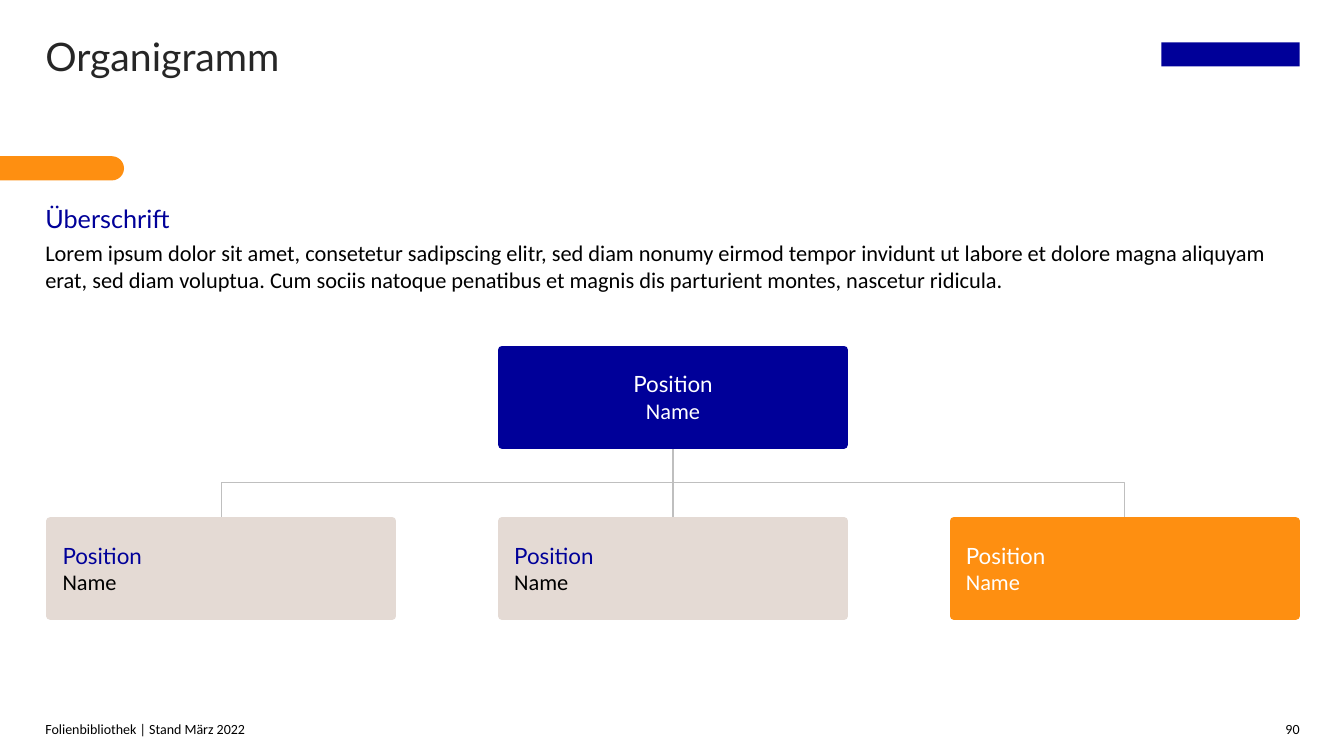
"""Builds an organisation chart slide with one lead box and three reports."""
from dataclasses import dataclass

import lxml.etree
import pptx
import pptx.dml.color
import pptx.enum.shapes
import pptx.enum.text
import pptx.oxml.ns
import pptx.util

Inches = pptx.util.Inches
Pt = pptx.util.Pt
RGB = pptx.dml.color.RGBColor.from_string
Align = pptx.enum.text.PP_ALIGN
Anchor = pptx.enum.text.MSO_ANCHOR
Shape = pptx.enum.shapes.MSO_SHAPE
Link = pptx.enum.shapes.MSO_CONNECTOR
qn = pptx.oxml.ns.qn


@dataclass(frozen=True)
class Theme:
    blue: str = "000099"
    orange: str = "FE8F11"
    sand: str = "E4DAD4"
    grey: str = "BFBFBF"
    dark: str = "262626"
    black: str = "000000"
    white: str = "FFFFFF"
    head_font: str = "Lato"
    body_font: str = "Calibri"
    title: float = 28
    heading: float = 18
    body: float = 16
    footer: float = 10
    border: float = 6
    link: float = 0.75


T = Theme()


@dataclass(frozen=True)
class Line:
    text: str
    size: float
    font: str
    color: str
    after: float = 0


@dataclass(frozen=True)
class Block:
    x: float
    y: float
    w: float
    h: float
    lines: tuple[Line, ...]
    align: Align = Align.LEFT
    anchor: Anchor = Anchor.TOP
    wrap: bool = True


@dataclass(frozen=True)
class Post:
    x: float
    y: float
    fill: str
    position_color: str
    name_color: str
    align: Align = Align.LEFT


BOX_W, BOX_H = 3.39, 0.94
COLUMNS = [0.5 + 4.48 * i for i in range(3)]
LEAD_Y, REPORT_Y = 3.47, 5.17
LEFT, CONTENT_W = 0.45, 12.44

BLOCKS = [
    Block(LEFT, 0.32, 9.61, 0.55, (Line("Organigramm", T.title, T.head_font, T.dark),)),
    Block(LEFT, 2.02, CONTENT_W, 3.98, (
        Line("Überschrift", T.heading, T.head_font, T.blue, 4),
        Line("Lorem ipsum dolor sit amet, consetetur sadipscing elitr, sed diam nonumy "
             "eirmod tempor invidunt ut labore et dolore magna aliquyam erat, sed diam "
             "voluptua. Cum sociis natoque penatibus et magnis dis parturient montes, "
             "nascetur ridicula.", T.body, T.body_font, T.black, 4))),
    Block(LEFT, 7.16, 11.06, 0.16,
          (Line("Folienbibliothek | Stand März 2022", T.footer, T.body_font, T.black),),
          anchor=Anchor.BOTTOM),
    Block(12.58, 7.16, 0.31, 0.16, (Line("90", T.footer, T.body_font, T.black),),
          Align.RIGHT, Anchor.BOTTOM, False),
]

POSTS = [
    Post(COLUMNS[0], REPORT_Y, T.sand, T.blue, T.black),
    Post(COLUMNS[1], REPORT_Y, T.sand, T.blue, T.black),
    Post(COLUMNS[2], REPORT_Y, T.orange, T.white, T.white),
    Post(COLUMNS[1], LEAD_Y, T.blue, T.white, T.white, Align.CENTER),
]


def write(tf, lines: tuple[Line, ...], align: Align, anchor: Anchor,
          inset: float = 0, wrap: bool = True) -> None:
    tf.word_wrap = wrap
    tf.vertical_anchor = anchor
    tf.margin_left = tf.margin_right = tf.margin_top = tf.margin_bottom = Inches(inset)
    for i, line in enumerate(lines):
        p = tf.add_paragraph() if i else tf.paragraphs[0]
        p.alignment = align
        p.space_after = Pt(line.after)
        r = p.add_run()
        r.text = line.text
        r.font.size = Pt(line.size)
        r.font.name = line.font
        r.font.color.rgb = RGB(line.color)


def draw_block(s, block: Block) -> None:
    sp = s.shapes.add_textbox(*map(Inches, (block.x, block.y, block.w, block.h)))
    write(sp.text_frame, block.lines, block.align, block.anchor, wrap=block.wrap)


def draw_shape(s, kind: Shape, x: float, y: float, w: float, h: float, fill: str):
    sp = s.shapes.add_shape(kind, *map(Inches, (x, y, w, h)))
    sp.shadow.inherit = False
    sp.fill.solid()
    sp.fill.fore_color.rgb = RGB(fill)
    sp.line.fill.background()
    return sp


def draw_post(s, post: Post) -> None:
    sp = draw_shape(s, Shape.RECTANGLE, post.x, post.y, BOX_W, BOX_H, post.fill)
    sp.line.color.rgb = RGB(post.fill)
    sp.line.width = Pt(T.border)
    lxml.etree.SubElement(sp.line._get_or_add_ln(), qn("a:round"))
    lines = (Line("Position", T.body, T.head_font, post.position_color),
             Line("Name", T.body, T.body_font, post.name_color))
    write(sp.text_frame, lines, post.align, Anchor.MIDDLE, 0.12)


def draw_link(s, x0: float, y0: float, x1: float, y1: float) -> None:
    kind, rot = Link.STRAIGHT, 0
    if x0 != x1:
        kind, rot = Link.ELBOW, 90 if x1 < x0 else 270
        cx, cy = (x0 + x1) / 2, (y0 + y1) / 2
        half_w, half_h = (y1 - y0) / 2, abs(x1 - x0) / 2
        side = -1 if x1 < x0 else 1
        x0, x1 = cx + side * half_w, cx - side * half_w
        y0, y1 = cy - half_h, cy + half_h
    c = s.shapes.add_connector(kind, *map(Inches, (x0, y0, x1, y1)))
    c.line.color.rgb = RGB(T.grey)
    c.line.width = Pt(T.link)
    sp_pr = c._element.spPr
    if rot:
        sp_pr.find(qn("a:xfrm")).set("rot", str(rot * 60000))
    lxml.etree.SubElement(sp_pr, qn("a:effectLst"))


def draw_accent_bar(s, y: float, w: float, h: float) -> None:
    sp = draw_shape(s, Shape.ROUND_2_SAME_RECTANGLE,
                    (w - h) / 2, y - (w - h) / 2, h, w, T.orange)
    sp.adjustments[0] = 0.5
    sp.rotation = 90


def main() -> None:
    prs = pptx.Presentation()
    prs.slide_width, prs.slide_height = Inches(13.33), Inches(7.5)
    s = prs.slides.add_slide(prs.slide_layouts[6])
    draw_accent_bar(s, 1.55, 1.23, 0.24)
    draw_shape(s, Shape.RECTANGLE, 11.52, 0.42, 1.37, 0.24, T.blue)
    center = COLUMNS[1] + BOX_W / 2
    for x in COLUMNS:
        draw_link(s, center, LEAD_Y + BOX_H, x + BOX_W / 2, REPORT_Y)
    for post in POSTS:
        draw_post(s, post)
    for block in BLOCKS:
        draw_block(s, block)
    prs.save("out.pptx")


if __name__ == "__main__":
    main()
